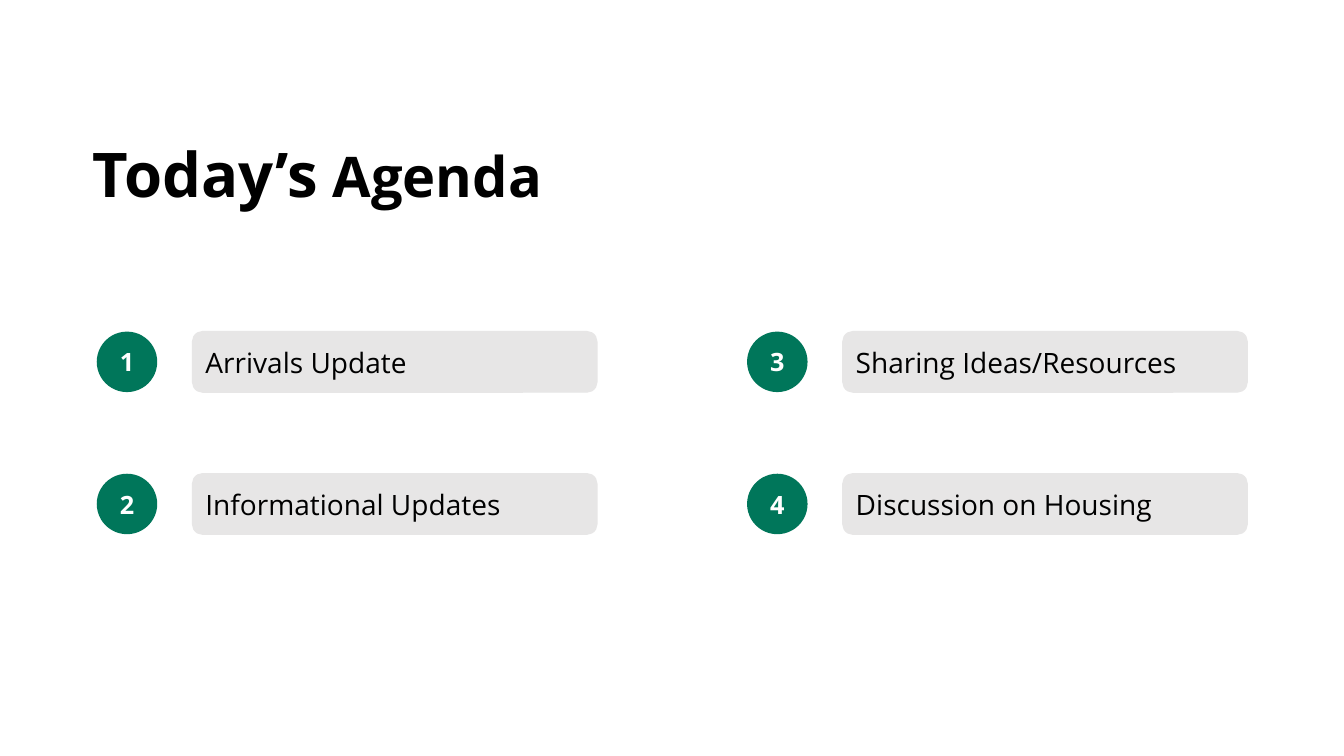
from pptx import Presentation
from pptx.dml.color import RGBColor
from pptx.enum.shapes import MSO_SHAPE
from pptx.enum.text import MSO_ANCHOR, PP_ALIGN
from pptx.util import Inches, Pt

OVAL, ROUNDED = MSO_SHAPE.OVAL, MSO_SHAPE.ROUNDED_RECTANGLE
MIDDLE, LEFT, CENTER = MSO_ANCHOR.MIDDLE, PP_ALIGN.LEFT, PP_ALIGN.CENTER

FONT = "Open Sans"
GREEN, GREY, BLACK, WHITE = "00765A", "E7E6E6", "000000", "FFFFFF"

AGENDA = ["Arrivals Update", "Informational Updates",
          "Sharing Ideas/Resources", "Discussion on Housing"]
ROWS = 2
GRID_LEFT, GRID_TOP = 0.96, 3.29
COLUMN_STEP, ROW_STEP = 6.45, 1.41
ITEM_HEIGHT, LABEL_OFFSET, LABEL_WIDTH = 0.6, 0.95, 4.01


def rgb(color):
    return RGBColor.from_string(color)


def add_run(p, text, size, color, bold=False):
    r = p.add_run()
    r.text = text
    r.font.color.rgb = rgb(color)
    for name, value in {"name": FONT, "size": Pt(size), "bold": bold}.items():
        setattr(r.font, name, value)


def add_title(s, left, top, width, height, runs):
    sp = s.shapes.add_textbox(Inches(left), Inches(top), Inches(width), Inches(height))
    tf = sp.text_frame
    tf.word_wrap = True
    for text, size in runs:
        add_run(tf.paragraphs[0], text, size, BLACK, bold=True)


def add_filled_shape(s, kind, left, top, width, fill, align):
    """Add a filled shape and return its paragraph and line format."""
    sp = s.shapes.add_shape(kind, Inches(left), Inches(top),
                            Inches(width), Inches(ITEM_HEIGHT))
    sp.shadow.inherit = False
    sp.fill.solid()
    sp.fill.fore_color.rgb = rgb(fill)
    tf = sp.text_frame
    tf.word_wrap = True
    tf.vertical_anchor = MIDDLE
    p = tf.paragraphs[0]
    p.alignment = align
    return p, sp.line


def add_agenda_item(s, number, text, left, top):
    # Number badge
    p, line = add_filled_shape(s, OVAL, left, top, ITEM_HEIGHT, GREEN, CENTER)
    line.fill.background()
    add_run(p, str(number), 18, WHITE, bold=True)

    # Topic label
    p, line = add_filled_shape(s, ROUNDED, left + LABEL_OFFSET, top,
                               LABEL_WIDTH, GREY, LEFT)
    line.color.rgb = rgb(GREY)
    line.width = Pt(1)
    add_run(p, text, 20, BLACK)


def main():
    prs = Presentation()
    prs.slide_width, prs.slide_height = Inches(13.33), Inches(7.5)
    s = prs.slides.add_slide(prs.slide_layouts[6])

    # Heading
    add_title(s, 0.82, 1.3, 7.28, 0.84, [("Today’s", 44), (" Agenda", 40)])

    # Agenda grid, filled column by column
    for i, text in enumerate(AGENDA):
        column, row = divmod(i, ROWS)
        add_agenda_item(s, i + 1, text, GRID_LEFT + column * COLUMN_STEP,
                        GRID_TOP + row * ROW_STEP)

    prs.save("out.pptx")


if __name__ == "__main__":
    main()
